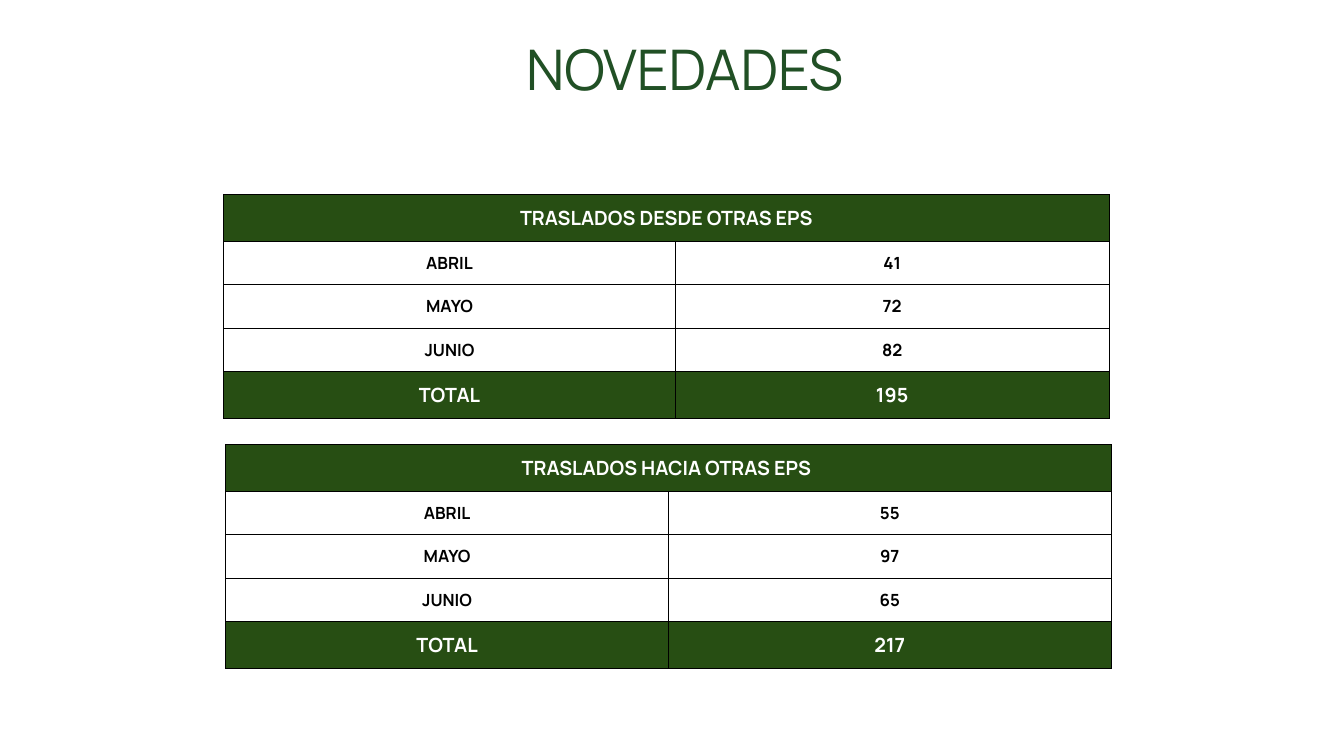
import pptx
import pptx.util
import pptx.dml.color
import pptx.enum.text
import pptx.oxml
import pptx.oxml.ns

GREEN = pptx.dml.color.RGBColor(0x27, 0x4E, 0x13)
TITLE_GREEN = pptx.dml.color.RGBColor(0x21, 0x50, 0x25)
WHITE = pptx.dml.color.RGBColor(0xFF, 0xFF, 0xFF)
BLACK = pptx.dml.color.RGBColor(0, 0, 0)
FONT = "Manrope"
MONTHS = ("ABRIL", "MAYO", "JUNIO")
Inches = pptx.util.Inches
Pt = pptx.util.Pt


def style_paragraph(p, size, color, bold):
    p.alignment = pptx.enum.text.PP_ALIGN.CENTER
    p.font.name = FONT
    p.font.size = Pt(size)
    p.font.bold = bold
    p.font.color.rgb = color


def add_borders(cell):
    tcPr = cell._tc.get_or_add_tcPr()
    for side in ("lnL", "lnR", "lnT", "lnB"):
        tcPr.append(pptx.oxml.parse_xml(
            f'<a:{side} {pptx.oxml.ns.nsdecls("a")} w="{Pt(0.75)}">'
            f'<a:solidFill><a:srgbClr val="{BLACK}"/></a:solidFill></a:{side}>'))


def format_cell(cell, text, banner):
    cell.text = text
    cell.margin_left = cell.margin_right = Inches(0.1)
    cell.margin_top = cell.margin_bottom = Inches(0.1)
    add_borders(cell)
    if banner:
        cell.fill.solid()
        cell.fill.fore_color.rgb = GREEN
    else:
        cell.fill.background()
    style_paragraph(cell.text_frame.paragraphs[0], 14 if banner else 12,
                    WHITE if banner else BLACK, True)


def add_title(s, box, text):
    title = s.shapes.title
    title.left, title.top, title.width, title.height = map(Inches, box)
    tf = title.text_frame
    tf.text = text
    tf.word_wrap = True
    tf.auto_size = pptx.enum.text.MSO_AUTO_SIZE.NONE
    tf.vertical_anchor = pptx.enum.text.MSO_ANCHOR.TOP
    p = tf.paragraphs[0]
    p.line_spacing = 0.9
    style_paragraph(p, 40, TITLE_GREEN, False)


def add_transfers(s, box, heading, values, first_share):
    rows = [(heading, ""), *zip(MONTHS, map(str, values)),
            ("TOTAL", str(sum(values)))]
    left, top, width, height = map(Inches, box)
    table = s.shapes.add_table(len(rows), 2, left, top, width, height).table
    table.columns[0].width = int(width * first_share)
    table.columns[1].width = width - table.columns[0].width
    for i, row in enumerate(rows):
        for j, text in enumerate(row):
            format_cell(table.cell(i, j), text, i in (0, len(rows) - 1))
    table.cell(0, 0).merge(table.cell(0, 1))


def main():
    prs = pptx.Presentation()
    prs.slide_width, prs.slide_height = Inches(13.33), Inches(7.5)
    s = prs.slides.add_slide(prs.slide_layouts[5])
    add_title(s, (1.63, 0.37, 10.32, 1.45), "NOVEDADES")
    add_transfers(s, (2.22, 1.93, 8.78, 2.07),
                  "TRASLADOS DESDE OTRAS EPS", (41, 72, 82), 0.51)
    add_transfers(s, (2.24, 4.41, 8.78, 2.11),
                  "TRASLADOS HACIA OTRAS EPS ", (55, 97, 65), 0.5)
    prs.save("out.pptx")


if __name__ == "__main__":
    main()
